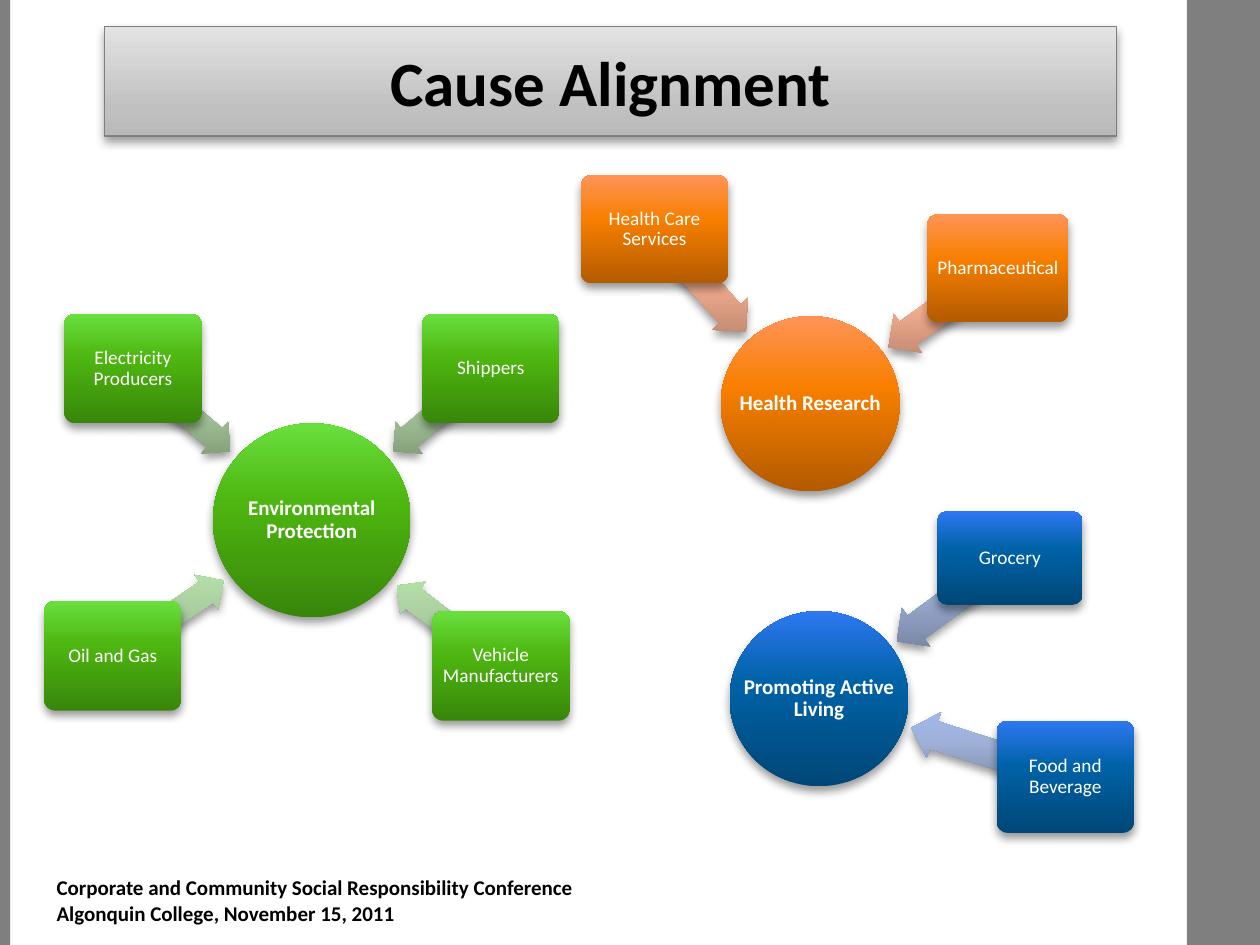
import math
from collections import namedtuple

from pptx import Presentation
from pptx.dml.color import RGBColor
from pptx.enum import shapes, text
from pptx.oxml import parse_xml
from pptx.oxml.ns import nsdecls
from pptx.util import Inches, Pt

SHAPE = shapes.MSO_SHAPE
CENTER = text.PP_ALIGN.CENTER
TIP_RADIUS = 1.08  # arrow tips stop this many hub radii from the hub centre

# Colours run from bottom to top; at is left, top, width, height in inches
Cluster = namedtuple("Cluster", "hub at colors arrow_colors arrow_height boxes")

CLUSTERS = [
    Cluster("Environmental Protection", (1.69, 3.36, 1.57, 1.54),
            ("38860A", "4EB610", "69DF3E"), ("7C9674", "ACCFA2", "B6E6A8"), 0.33,
            [("Oil and Gas", (0.35, 4.77, 1.09, 0.87)),
             ("Electricity Producers", (0.51, 2.49, 1.09, 0.87)),
             ("Shippers", (3.35, 2.49, 1.09, 0.87)),
             ("Vehicle Manufacturers", (3.43, 4.85, 1.09, 0.87))]),
    Cluster("Health Research", (5.72, 2.51, 1.42, 1.39),
            ("B35B00", "F87F00", "FF9457"), ("B9836C", "FEB697", "FFC6AE"), 0.38,
            [("Health Care Services", (4.61, 1.39, 1.17, 0.86)),
             ("Pharmaceutical", (7.36, 1.7, 1.12, 0.86))]),
    Cluster("Promoting Active Living", (5.79, 4.85, 1.42, 1.39),
            ("004778", "0062A6", "2E78F3"), ("727F9B", "9EB0D6", "A2BAEF"), 0.38,
            [("Grocery", (7.44, 4.06, 1.15, 0.74)),
             ("Food and Beverage", (7.91, 5.72, 1.09, 0.89))]),
]


def rgb(value):
    return RGBColor.from_string(value)


def add_shape(slide, kind, at, adjustments=()):
    """Add a preset shape without line or shadow."""
    sp = slide.shapes.add_shape(kind, *map(Inches, at))
    sp.shadow.inherit = False
    sp.line.fill.background()
    for i, value in enumerate(adjustments):
        sp.adjustments[i] = value
    return sp


def add_panel(slide, at, color):
    sp = add_shape(slide, SHAPE.RECTANGLE, at)
    sp.fill.solid()
    sp.fill.fore_color.rgb = rgb(color)


def add_glossy(slide, kind, at, colors, middle=60, adjustments=()):
    """Add a shape with a gradient from bottom to top and a soft shadow below."""
    sp = add_shape(slide, kind, at, adjustments)
    stops = "".join(
        f'<a:gs pos="{pos * 1000}"><a:srgbClr val="{color}"/></a:gs>'
        for pos, color in zip((0, middle, 100), colors))
    props = sp._element.spPr
    props.find("{*}prstGeom").addnext(parse_xml(
        f'<a:gradFill {nsdecls("a")} rotWithShape="0"><a:gsLst>{stops}</a:gsLst>'
        '<a:lin ang="16200000" scaled="0"/></a:gradFill>'))
    props.find("{*}effectLst").append(parse_xml(
        f'<a:outerShdw {nsdecls("a")} blurRad="{Pt(5.2)}" dist="{Pt(3)}" '
        'dir="5400000" rotWithShape="0"><a:srgbClr val="000000">'
        '<a:alpha val="40000"/></a:srgbClr></a:outerShdw>'))
    return sp


def write(sp, words, size, color="000000", bold=False, align=None,
          inset=None, spacing=None):
    tf = sp.text_frame
    tf.word_wrap = True
    tf.vertical_anchor = text.MSO_ANCHOR.MIDDLE
    if inset is not None:
        tf.margin_left = tf.margin_right = Inches(inset)
        tf.margin_top = tf.margin_bottom = Inches(inset)
    p = tf.paragraphs[0]
    p.alignment = align
    p.line_spacing = spacing
    r = p.add_run()
    r.text = words
    r.font.name = "Calibri"
    r.font.size = Pt(size)
    r.font.bold = bold
    r.font.color.rgb = rgb(color)


def add_textbox(slide, at, words, **fmt):
    write(slide.shapes.add_textbox(*map(Inches, at)), words, **fmt)


def center(at):
    left, top, width, height = at
    return left + width / 2, top + height / 2


def add_arrow(slide, box, hub, height, colors):
    """Add a block arrow from the centre of a box to just outside the hub."""
    (x, y), (hub_x, hub_y) = center(box), center(hub)
    dx, dy = hub_x - x, hub_y - y
    distance = math.hypot(dx, dy)
    length = distance - TIP_RADIUS * hub[2] / 2
    share = length / distance / 2
    at = (x + dx * share - length / 2, y + dy * share - height / 2, length, height)
    sp = add_glossy(slide, SHAPE.LEFT_ARROW, at, colors, adjustments=(0.6, 0.5))
    sp.rotation = math.degrees(math.atan2(-dy, -dx)) % 360


def add_cluster(slide, cluster):
    label = dict(color="FFFFFF", align=CENTER, spacing=0.9)
    add_glossy(slide, SHAPE.OVAL, cluster.at, cluster.colors)
    # The label uses the full width of the circle, so it has its own box
    add_textbox(slide, cluster.at, cluster.hub, size=12, bold=True, inset=0.01, **label)
    for words, at in cluster.boxes:
        add_arrow(slide, at, cluster.at, cluster.arrow_height, cluster.arrow_colors)
        sp = add_glossy(slide, SHAPE.ROUNDED_RECTANGLE, at, cluster.colors,
                        adjustments=(0.1,))
        write(sp, words, size=11, inset=0.02, **label)


def add_title(slide, words):
    sp = add_glossy(slide, SHAPE.RECTANGLE, (0.83, 0.21, 8.03, 0.87),
                    ("B9B9B9", "C0C0C0", "E3E3E3"), middle=25)
    sp.line.color.rgb = rgb("7F7F7F")
    sp.line.width = Pt(0.75)
    write(sp, words, size=36, bold=True, align=CENTER)


def main():
    prs = Presentation()
    prs.slide_width, prs.slide_height = Inches(10), Inches(7.5)
    slide = prs.slides.add_slide(prs.slide_layouts[6])
    add_panel(slide, (9.42, 0, 0.58, 7.5), "7F7F7F")
    add_panel(slide, (0, 0, 0.08, 7.5), "7F7F7F")
    add_title(slide, "Cause Alignment")
    add_textbox(slide, (0.35, 6.98, 4.65, 0.33),
                "Corporate and Community Social Responsibility Conference "
                "Algonquin College, November 15, 2011", size=12, bold=True)
    for cluster in CLUSTERS:
        add_cluster(slide, cluster)
    prs.save("out.pptx")


if __name__ == "__main__":
    main()
